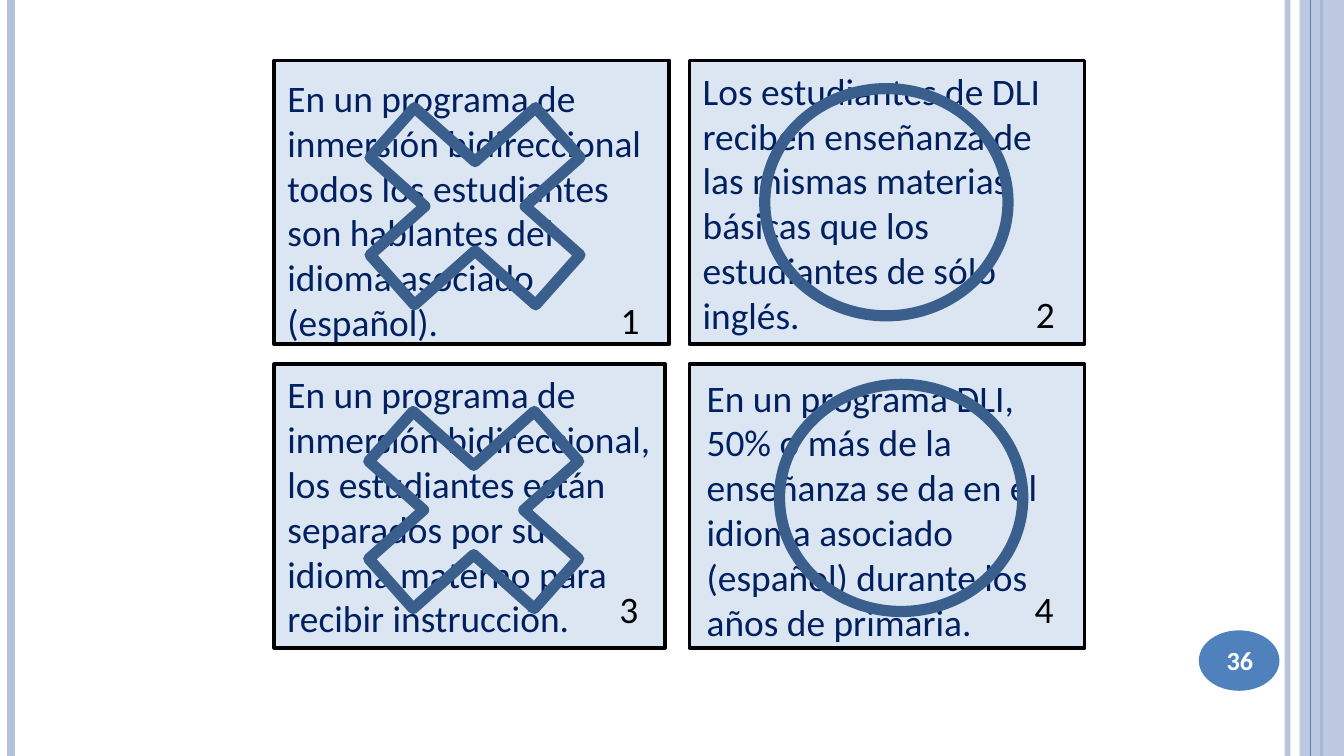
from lxml import etree
from pptx import Presentation
from pptx.dml.color import RGBColor
from pptx.enum.shapes import MSO_CONNECTOR, MSO_SHAPE
from pptx.enum.text import MSO_ANCHOR, PP_ALIGN
from pptx.oxml.ns import qn
from pptx.util import Inches, Pt

PALE_BLUE = RGBColor(0xB3, 0xC1, 0xDB)
BLUE = RGBColor(0x4F, 0x81, 0xBD)
CARD_FILL = RGBColor(0xDC, 0xE6, 0xF2)
MARK_BLUE = RGBColor(0x3A, 0x5F, 0x8C)
NAVY = RGBColor(0x00, 0x20, 0x60)
BLACK = RGBColor(0x00, 0x00, 0x00)
WHITE = RGBColor(0xFF, 0xFF, 0xFF)

SLIDE_W = 10
SLIDE_H = SLIDE_W * 9 / 16
CARD_W, CARD_H = 2.94, 2.11
COLUMNS, ROWS = (2.04, 5.13), (0.45, 2.71)
CROSS = (MSO_SHAPE.MATH_MULTIPLY, 2.37, 2.11)
CIRCLE = (MSO_SHAPE.OVAL, 1.81, 1.69)

# Offsets are relative to the card; "text_box" is (dx, dy, width, height)
CARDS = [
    dict(text="En un programa de inmersión bidireccional todos los estudiantes "
              "son hablantes del idioma asociado (español).",
         text_box=(0, 0.06, 2.91, 2.12), number_at=(2.48, 1.71),
         mark=CROSS, mark_at=(0.31, 0.03)),
    dict(text="Los estudiantes de DLI reciben enseñanza de las mismas materias "
              "básicas que los estudiantes de sólo inglés.",
         number_at=(2.48, 1.67), mark=CIRCLE, mark_at=(0.56, 0.21)),
    dict(text="En un programa de inmersión bidireccional, los estudiantes están "
              "separados por su idioma materno para recibir instrucción.",
         width=2.91, number_at=(2.47, 1.6), mark=CROSS, mark_at=(0.3, 0.03)),
    dict(text="En un programa DLI, 50% o más de la enseñanza se da en el idioma "
              "asociado (español) durante los años de primaria.",
         text_box=(0.03, 0.03, 2.8, 2.46), number_at=(2.47, 1.6),
         mark=CIRCLE, mark_at=(0.67, 0.15)),
]


def set_alpha(fill_parent, percent):
    color = fill_parent.find(qn("a:solidFill"))[0]
    etree.SubElement(color, qn("a:alpha"), val=str(percent * 1000))


def add_shape(slide, kind, box, fill=None, line=None, weight=1):
    shape = slide.shapes.add_shape(kind, *map(Inches, box))
    shape.shadow.inherit = False
    if fill is None:
        shape.fill.background()
    else:
        shape.fill.solid()
        shape.fill.fore_color.rgb = fill
    if line is None:
        shape.line.fill.background()
    else:
        shape.line.color.rgb = line
        shape.line.width = Pt(weight)
    return shape


def write(shape, text, color, size=20, bold=False,
          align=PP_ALIGN.LEFT, anchor=MSO_ANCHOR.TOP):
    frame = shape.text_frame
    frame.word_wrap = True
    frame.vertical_anchor = anchor
    paragraph = frame.paragraphs[0]
    paragraph.alignment = align
    run = paragraph.add_run()
    run.text = text
    run.font.color.rgb = color
    for name, value in dict(name="Calibri", size=Pt(size), bold=bold).items():
        setattr(run.font, name, value)


def add_text(slide, box, text, color, **style):
    write(slide.shapes.add_textbox(*map(Inches, box)), text, color, **style)


def add_vertical_rule(slide, x, color, weight, alpha=None):
    rule = slide.shapes.add_connector(
        MSO_CONNECTOR.STRAIGHT, Inches(x), 0, Inches(x), Inches(SLIDE_H))
    rule.line.color.rgb = color
    rule.line.width = Pt(weight)
    properties = rule._element.spPr
    if alpha:
        set_alpha(properties.find(qn("a:ln")), alpha)
    etree.SubElement(properties, qn("a:effectLst"))


def add_side_bands(slide):
    add_vertical_rule(slide, 9.58, PALE_BLUE, 3, alpha=93)
    add_vertical_rule(slide, 0.08, PALE_BLUE, 4.5)
    add_vertical_rule(slide, 9.83, BLUE, 1.5)
    band = add_shape(slide, MSO_SHAPE.RECTANGLE,
                     (9.67, 0, SLIDE_W - 9.67, SLIDE_H), PALE_BLUE)
    set_alpha(band._element.spPr, 87)
    add_vertical_rule(slide, 9.75, BLUE, 0.75)


def add_page_badge(slide, left, top, number):
    add_shape(slide, MSO_SHAPE.OVAL, (left, top, 0.6, 0.45), BLUE)
    add_text(slide, (left - 0.03, top + 0.01, 0.67, 0.43), number, WHITE,
             size=14, bold=True, align=PP_ALIGN.CENTER, anchor=MSO_ANCHOR.MIDDLE)


def add_card(slide, left, top, number, text, number_at, mark, mark_at,
             text_box=None, width=CARD_W):
    panel = add_shape(slide, MSO_SHAPE.RECTANGLE, (left, top, width, CARD_H),
                      CARD_FILL, BLACK, 2)
    # Statement: inside the panel, or in its own box over it
    if text_box:
        dx, dy, *size = text_box
        add_text(slide, (left + dx, top + dy, *size), text, NAVY)
    else:
        write(panel, text, NAVY, anchor=MSO_ANCHOR.MIDDLE)
    # Card number
    dx, dy = number_at
    add_text(slide, (left + dx, top + dy, 0.4, 0.44), str(number), BLACK)
    # True (circle) or false (cross) mark
    kind, *size = mark
    dx, dy = mark_at
    add_shape(slide, kind, (left + dx, top + dy, *size), line=MARK_BLUE, weight=6)


def main():
    deck = Presentation()
    deck.slide_width, deck.slide_height = Inches(SLIDE_W), Inches(SLIDE_H)
    slide = deck.slides.add_slide(deck.slide_layouts[6])
    add_side_bands(slide)
    for index, card in enumerate(CARDS):
        row, column = divmod(index, 2)
        add_card(slide, COLUMNS[column], ROWS[row], index + 1, **card)
    add_page_badge(slide, 8.92, 4.69, "36")
    deck.save("out.pptx")


if __name__ == "__main__":
    main()
